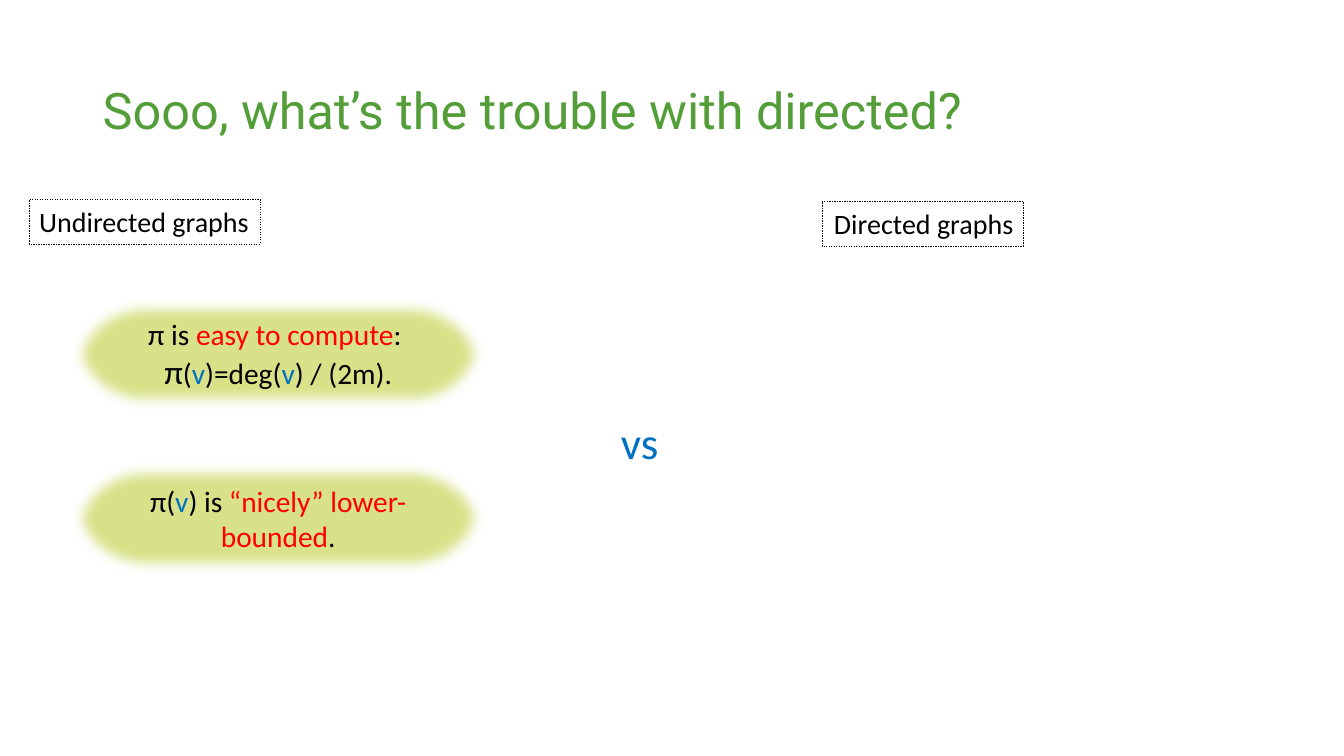
from lxml.etree import SubElement
from pptx import Presentation
from pptx.dml.color import RGBColor
from pptx.enum.dml import MSO_LINE as Dash
from pptx.enum.shapes import MSO_SHAPE as Kind
from pptx.enum.text import MSO_ANCHOR as Anchor, PP_ALIGN as Align
from pptx.oxml.ns import qn
from pptx.util import Inches, Pt

COLORS = {"green": "549E39", "blue": "0070C0", "red": "FF0000",
          "black": "000000", "lime": "D9E289"}


def color(name):
    return RGBColor.from_string(COLORS[name])


def write(shape, lines, size, font="Calibri", align=Align.LEFT,
          anchor=Anchor.TOP, wrap=True, spacing=None):
    """Fill a shape with lines, each a list of (text, colour[, size]) runs."""
    frame = shape.text_frame
    for key, value in {"word_wrap": wrap, "vertical_anchor": anchor}.items():
        setattr(frame, key, value)
    for i, runs in enumerate(lines):
        para = frame.add_paragraph() if i else frame.paragraphs[0]
        for key, value in {"alignment": align, "line_spacing": spacing}.items():
            setattr(para, key, value)
        for text, tint, *own in runs:
            run = para.add_run()
            run.text = text
            look = {"name": font, "size": Pt(own[0] if own else size)}
            for key, value in look.items():
                setattr(run.font, key, value)
            run.font.color.rgb = color(tint)


def add_title(slide, box, text):
    shape = slide.shapes.add_textbox(*map(Inches, box))
    write(shape, [[(text, "green")]], 36, "Roboto",
          anchor=Anchor.MIDDLE, spacing=0.9)


def add_versus(slide, box):
    shape = slide.shapes.add_textbox(*map(Inches, box))
    write(shape, [[("vs", "blue")]], 32, wrap=False)


def add_label(slide, box, text, align=Align.LEFT):
    """Add a heading in a thin dashed frame."""
    shape = slide.shapes.add_shape(Kind.RECTANGLE, *map(Inches, box))
    shape.shadow.inherit = False
    shape.fill.background()
    shape.line.color.rgb = color("black")
    for key, value in {"width": Pt(0.25), "dash_style": Dash.DASH}.items():
        setattr(shape.line, key, value)
    write(shape, [[(text, "black")]], 20, align=align)


def add_pill(slide, box, lines):
    """Add a rounded fact with a soft edge."""
    shape = slide.shapes.add_shape(Kind.FLOWCHART_TERMINATOR, *map(Inches, box))
    shape.shadow.inherit = False
    shape.fill.solid()
    shape.fill.fore_color.rgb = color("lime")
    shape.line.fill.background()
    effects = shape._element.spPr.find(qn("a:effectLst"))
    SubElement(effects, qn("a:softEdge"), rad=str(Pt(9)))
    write(shape, lines, 21, align=Align.CENTER, anchor=Anchor.MIDDLE)


def add_facts(slide, box, facts, step):
    """Stack pills downwards from the first box."""
    left, top, width, height = box
    for i, lines in enumerate(facts):
        add_pill(slide, (left, top + i * step, width, height), lines)


def main():
    deck = Presentation()
    deck.slide_width, deck.slide_height = Inches(13.33), Inches(7.5)
    slide = deck.slides.add_slide(deck.slide_layouts[6])
    facts = [
        [[("π is ", "black"), ("easy to compute", "red"), (": ", "black")],
         [("π", "black", 24), ("(", "black"), ("v", "blue"),
          (")=deg(", "black"), ("v", "blue"), (") / (2m).", "black")]],
        [[("π(", "black"), ("v", "blue"), (") is ", "black"),
          ("“nicely” lower-bounded", "red"), (".", "black")]],
    ]
    add_title(slide, (0.92, 0.4, 11.5, 1.45),
              "Sooo, what’s the trouble with directed?")
    add_versus(slide, (6.06, 4.07, 0.63, 0.64))
    add_label(slide, (0.29, 1.98, 2.29, 0.44), "Undirected graphs")
    add_facts(slide, (0.68, 2.95, 4.16, 1.12), facts, 1.63)
    add_label(slide, (8.15, 2, 2, 0.44), "Directed graphs", Align.RIGHT)
    deck.save("out.pptx")


if __name__ == "__main__":
    main()
